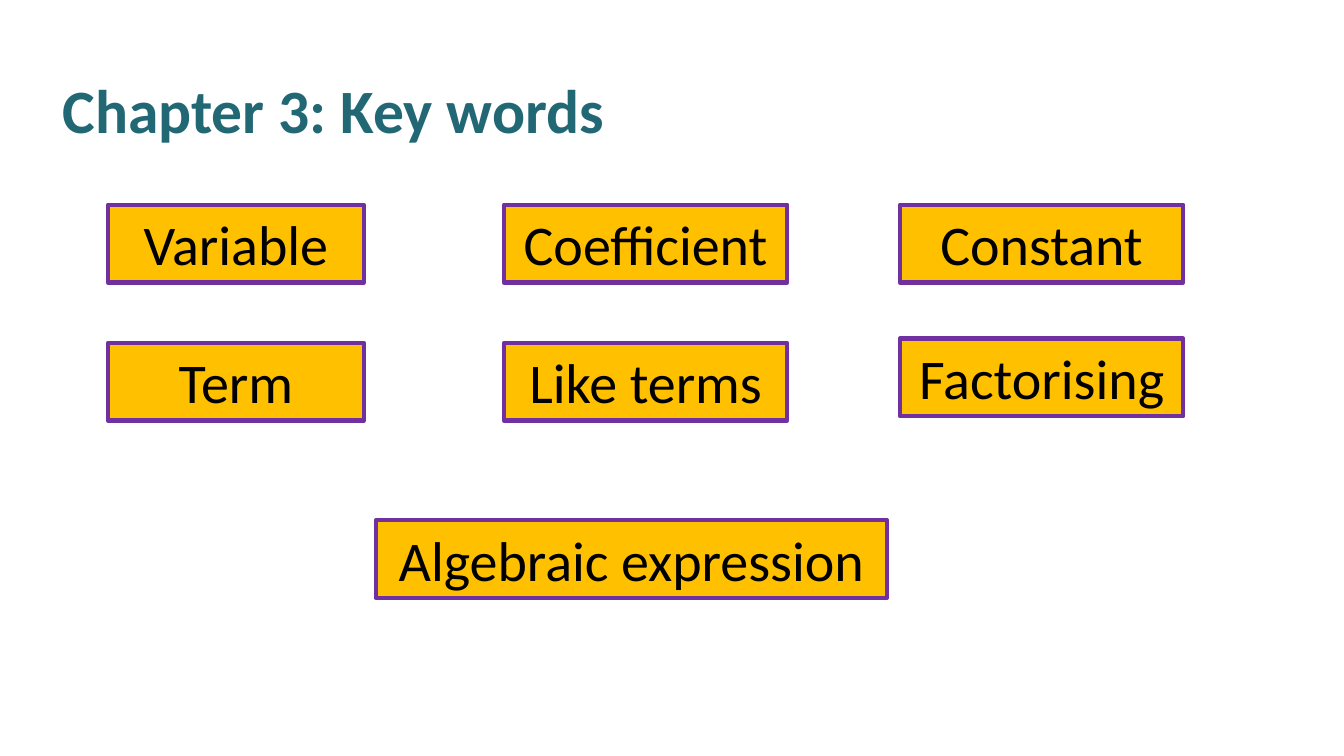
"""Build the key words slide for Chapter 3."""
from dataclasses import dataclass

from pptx import Presentation
from pptx.dml.color import RGBColor
from pptx.enum.shapes import MSO_SHAPE
from pptx.enum.text import MSO_ANCHOR, MSO_AUTO_SIZE, PP_ALIGN
from pptx.util import Cm, Pt

RECTANGLE = MSO_SHAPE.RECTANGLE
LEFT, CENTER = PP_ALIGN.LEFT, PP_ALIGN.CENTER
TOP, MIDDLE = MSO_ANCHOR.TOP, MSO_ANCHOR.MIDDLE
NO_FIT, GROW = MSO_AUTO_SIZE.NONE, MSO_AUTO_SIZE.SHAPE_TO_FIT_TEXT
TITLE_ONLY = 5


@dataclass(frozen=True)
class Theme:
    """Hold the font, colours and sizes of the slide."""
    font: str = "Calibri"
    heading: RGBColor = RGBColor(0x22, 0x68, 0x74)
    text: RGBColor = RGBColor(0, 0, 0)
    fill: RGBColor = RGBColor(0xFF, 0xC0, 0x00)
    border: RGBColor = RGBColor(0x70, 0x30, 0xA0)
    heading_size: Pt = Pt(44)
    word_size: Pt = Pt(40)
    border_width: Pt = Pt(3)


THEME = Theme()
COLUMNS = [(2.72 + 9.98 * column, width)
           for column, width in enumerate((6.45, 7.14, 7.14))]
ROWS = [
    [("Variable", 5.16), ("Coefficient", 5.16), ("Constant", 5.16)],
    [("Term", 8.64), ("Like terms", 8.64), ("Factorising", 8.53)],
]
BOX_HEIGHT = 1.96


def add_text(para, text, size, color, bold=False):
    """Add one formatted run to a paragraph."""
    span = para.add_run()
    span.text = text
    span.font.name = THEME.font
    span.font.size = size
    span.font.bold = bold
    span.font.color.rgb = color


def set_title(page, text):
    """Place and format the title placeholder."""
    title = page.shapes.title
    title.left, title.top = Cm(1.32), Cm(1.02)
    title.width, title.height = Cm(29.21), Cm(3.68)
    frame = title.text_frame
    frame.auto_size = NO_FIT
    frame.vertical_anchor = MIDDLE
    para = frame.paragraphs[0]
    para.alignment = LEFT
    para.line_spacing = 0.9
    add_text(para, text, THEME.heading_size, THEME.heading, bold=True)


def add_word(page, text, left, top, width):
    """Add a bordered box holding one key word."""
    box = page.shapes.add_shape(
        RECTANGLE, Cm(left), Cm(top), Cm(width), Cm(BOX_HEIGHT))
    box.shadow.inherit = False
    box.fill.solid()
    box.fill.fore_color.rgb = THEME.fill
    box.line.color.rgb = THEME.border
    box.line.width = THEME.border_width
    frame = box.text_frame
    frame.word_wrap = True
    frame.auto_size = GROW
    frame.vertical_anchor = TOP
    para = frame.paragraphs[0]
    para.alignment = CENTER
    add_text(para, text, THEME.word_size, THEME.text)


def main():
    """Create the deck and save it."""
    deck = Presentation()
    deck.slide_width, deck.slide_height = Cm(33.87), Cm(19.05)
    page = deck.slides.add_slide(deck.slide_layouts[TITLE_ONLY])
    set_title(page, "Chapter 3: Key words")
    for row in ROWS:
        for (word, top), (left, width) in zip(row, COLUMNS):
            add_word(page, word, left, top, width)
    add_word(page, "Algebraic expression", 9.47, 13.11, 12.88)
    deck.save("out.pptx")


if __name__ == "__main__":
    main()
